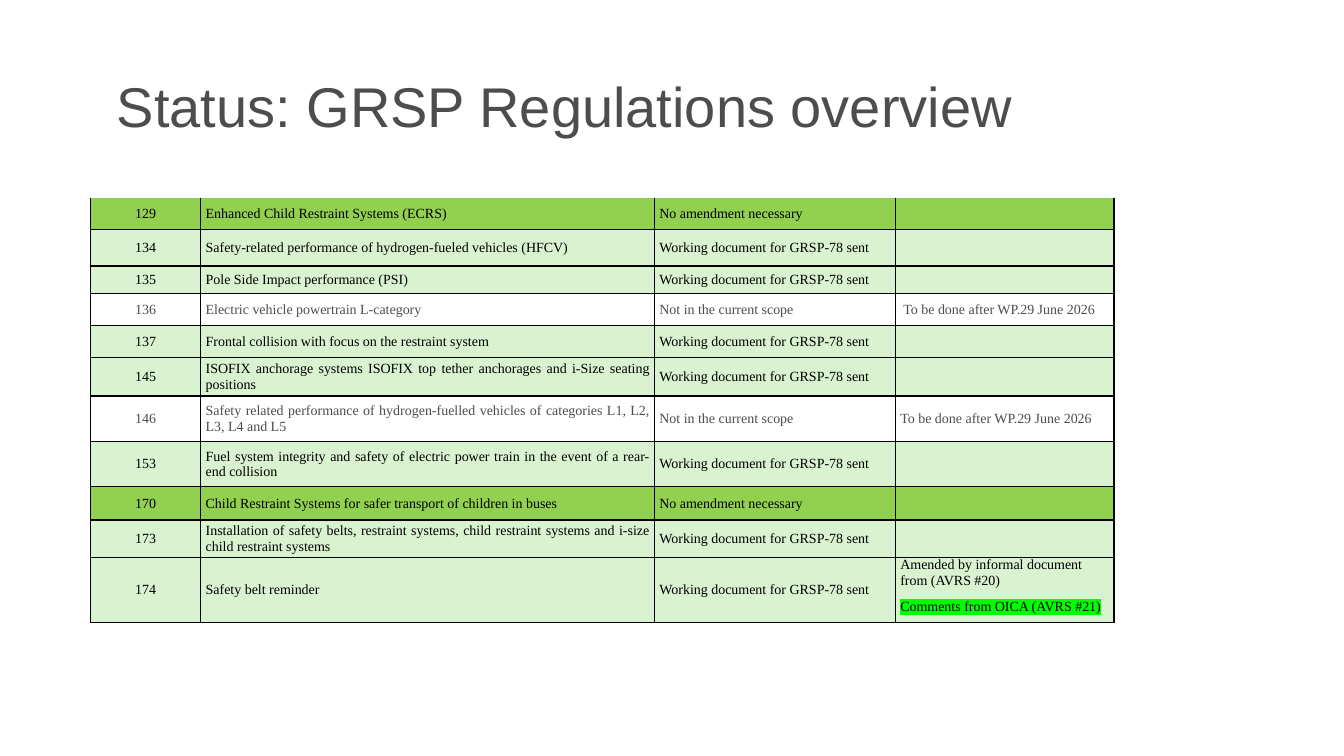
from lxml.etree import SubElement
from pptx import Presentation
from pptx.dml.color import RGBColor
from pptx.enum.text import MSO_ANCHOR as Anchor, PP_ALIGN as Align
from pptx.oxml.ns import qn
from pptx.util import Inches, Pt

BLACK, GREY, WHITE = "000000", "4D4D4D", "FFFFFF"
DONE, SENT, OUT = "92D050", "D9F2D0", WHITE
FONT = "Times New Roman"


def write(frame, text, size=10, font=FONT, color=BLACK, align=Align.LEFT,
          after=8, indent=0, mark=None):
    """Fill a text frame, one paragraph a line; mark highlights the last one."""
    frame.text = text
    for par in frame.paragraphs:
        par.alignment, par.space_after = align, Pt(after)
        if indent:
            par._p.get_or_add_pPr().set("marL", str(Inches(indent)))
        for run in par.runs:
            run.font.size, run.font.name = Pt(size), font
            run.font.color.rgb = RGBColor.from_string(color)
        if not par.runs:
            SubElement(par._p, qn("a:endParaRPr"), sz=str(size * 100))
    if mark:
        props = frame.paragraphs[-1].runs[0]._r.get_or_add_rPr()
        light = SubElement(props, qn("a:highlight"))
        SubElement(light, qn("a:srgbClr"), val=mark)
        props.find(qn("a:solidFill")).addnext(light)


def border(cell, sides):
    """Draw thin black lines on the given sides and none on the others."""
    for side in "LRTB":
        line = SubElement(cell._tc.get_or_add_tcPr(), qn("a:ln" + side), w=str(Pt(1)))
        if side in sides:
            fill = SubElement(line, qn("a:solidFill"))
            SubElement(fill, qn("a:srgbClr"), val=BLACK)
        else:
            SubElement(line, qn("a:noFill"))


deck = Presentation()
deck.slide_width, deck.slide_height = Inches(13.33), Inches(7.5)
slide = deck.slides.add_slide(deck.slide_layouts[5])

title = slide.shapes.title
title.left, title.top = Inches(1.06), Inches(0.53)
title.width, title.height = Inches(11.5), Inches(0.86)
frame = title.text_frame
frame.vertical_anchor = Anchor.BOTTOM
frame.margin_left = frame.margin_right = Inches(0.1)
frame.margin_top, frame.margin_bottom = Inches(0.05), 0
write(frame, "Status: GRSP Regulations overview", size=40, font="Arial",
      color=GREY, after=0)
frame.paragraphs[0].line_spacing = 0.9

status = {
    DONE: "No amendment necessary",
    SENT: "Working document for GRSP-78 sent",
    OUT: "Not in the current scope",
}
later = "To be done after WP.29 June 2026"
notes = {
    "136": later,
    "146": later,
    "174": "Amended by informal document from (AVRS #20)\nComments from OICA (AVRS #21)",
}
rules = [
    (0.32, "129", DONE, "Enhanced Child Restraint Systems (ECRS)"),
    (0.36, "134", SENT, "Safety-related performance of hydrogen-fueled vehicles (HFCV)"),
    (0.27, "135", SENT, "Pole Side Impact performance (PSI)"),
    (0.32, "136", OUT, "Electric vehicle powertrain L-category"),
    (0.32, "137", SENT, "Frontal collision with focus on the restraint system"),
    (0.38, "145", SENT, "ISOFIX anchorage systems ISOFIX top tether anchorages "
                        "and i-Size seating positions"),
    (0.45, "146", OUT, "Safety related performance of hydrogen-fuelled vehicles "
                       "of categories L1, L2, L3, L4 and L5"),
    (0.45, "153", SENT, "Fuel system integrity and safety of electric power train "
                        "in the event of a rear-end collision"),
    (0.33, "170", DONE, "Child Restraint Systems for safer transport of children in buses"),
    (0.37, "173", SENT, "Installation of safety belts, restraint systems, "
                        "child restraint systems and i-size child restraint systems"),
    (0.65, "174", SENT, "Safety belt reminder"),
]
widths = [1.09, 4.5, 2.39, 2.17]
aligns = [Align.CENTER, Align.JUSTIFY, Align.JUSTIFY, Align.LEFT]

table = slide.shapes.add_table(
    len(rules), len(widths), Inches(0.9), Inches(1.96),
    Inches(sum(widths)), Inches(sum(rule[0] for rule in rules))).table
table.first_row = table.horz_banding = False
for col, width in zip(table.columns, widths):
    col.width = Inches(width)

for r, (height, number, fill, name) in enumerate(rules):
    table.rows[r].height = Inches(height)
    texts = [number, name, status[fill], notes.get(number, "")]
    for c, (text, align) in enumerate(zip(texts, aligns)):
        cell = table.cell(r, c)
        cell.margin_left = cell.margin_right = Inches(0.05)
        cell.margin_top = cell.margin_bottom = 0
        double = "\n" in text
        cell.vertical_anchor = Anchor.TOP if double else Anchor.MIDDLE
        write(cell.text_frame, text, align=align,
              color=GREY if fill == OUT else BLACK,
              indent=0.03 if c == 3 and number == "136" else 0,
              mark="00FF00" if double else None)
        border(cell, "LRTB" if r else "LRB")
        cell.fill.solid()
        cell.fill.fore_color.rgb = RGBColor.from_string(fill)

deck.save("out.pptx")
